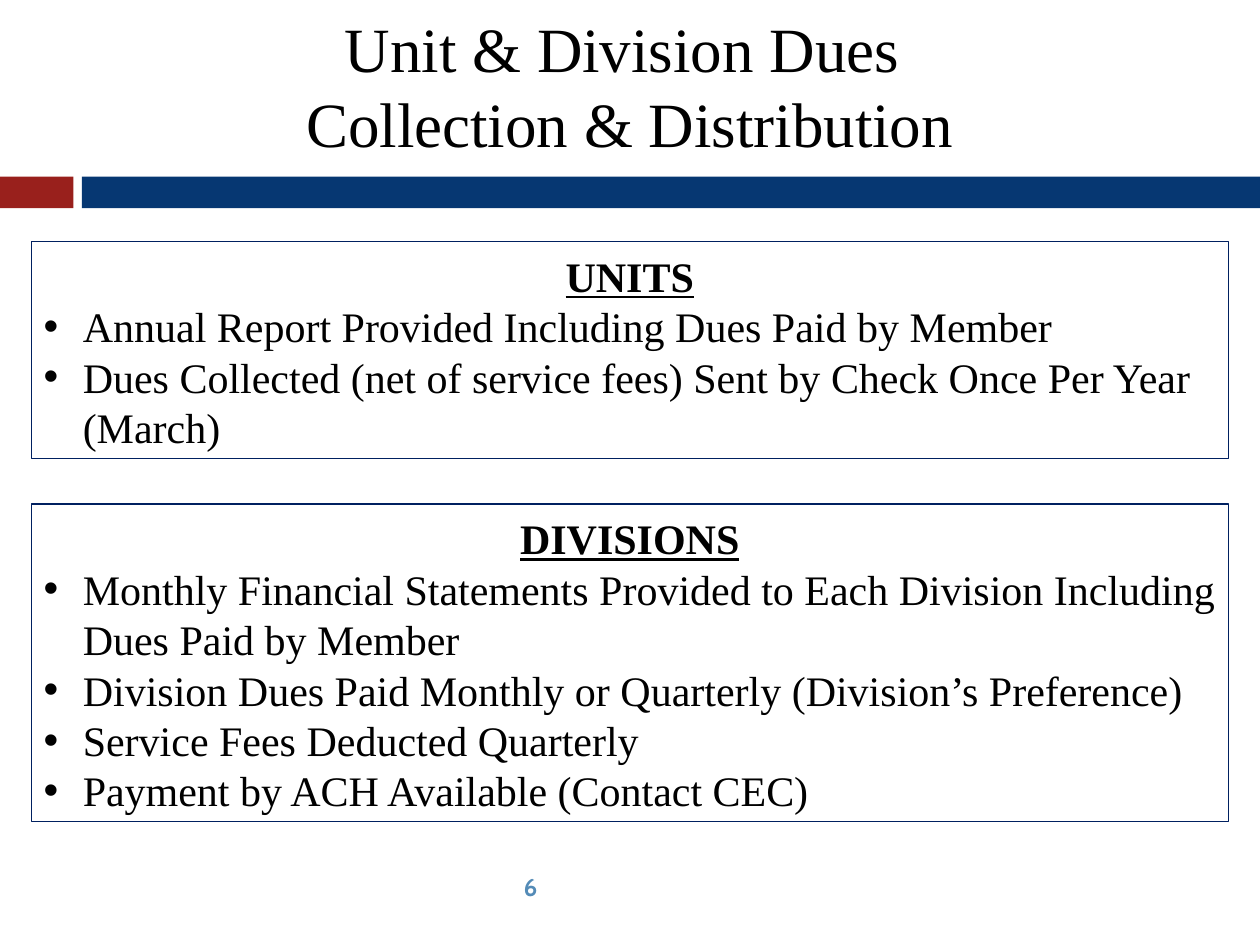
from lxml.etree import SubElement
from pptx import Presentation
from pptx.dml.color import RGBColor
from pptx.enum.shapes import MSO_SHAPE as Preset
from pptx.enum.text import MSO_ANCHOR as Anchor, PP_ALIGN as Align
from pptx.oxml import parse_xml
from pptx.oxml.ns import nsdecls, qn
from pptx.util import Cm, Pt

RED = RGBColor(0x99, 0x20, 0x1C)
BLUE = RGBColor(0x06, 0x37, 0x72)
NAVY = RGBColor(0x00, 0x20, 0x60)
LIGHT_BLUE = RGBColor(0x54, 0x8B, 0xB7)
BLACK = RGBColor(0, 0, 0)

SERIF = "Times New Roman"
TITLE = {"name": SERIF, "size": Pt(36)}
HEADING = {"name": SERIF, "size": Pt(24), "bold": True, "underline": True}
BULLET = {"name": SERIF, "size": Pt(24), "bold": False, "underline": False}
NUMBER = {"name": "Cabin", "size": Pt(14), "bold": True}


def add_text(paragraph, text, formats, color, align):
    paragraph.alignment = align
    run = paragraph.add_run()
    run.text = text
    for name, value in formats.items():
        setattr(run.font, name, value)
    run.font.color.rgb = color
    return run


presentation = Presentation()
presentation.slide_width = Cm(25.4)
presentation.slide_height = Cm(19.05)
slide = presentation.slides.add_slide(presentation.slide_layouts[6])

for left, width, color in [(0, 1.48, RED), (1.65, 23.75, BLUE)]:
    band = slide.shapes.add_shape(Preset.RECTANGLE, Cm(left), Cm(3.56), Cm(width), Cm(0.64))
    band.shadow.inherit = False
    band.fill.solid()
    band.fill.fore_color.rgb = color
    band.line.fill.background()

title = slide.shapes.add_textbox(Cm(1.83), Cm(0), Cm(21.74), Cm(3.18))
title_frame = title.text_frame
title_format = {"word_wrap": True, "vertical_anchor": Anchor.MIDDLE,
                "margin_left": Cm(0.18), "margin_right": Cm(0.18),
                "margin_top": Cm(0.35), "margin_bottom": Cm(0.1)}
for name, value in title_format.items():
    setattr(title_frame, name, value)
for index, text in enumerate(["Unit & Division Dues ", "Collection & Distribution"]):
    paragraph = title_frame.add_paragraph() if index else title_frame.paragraphs[0]
    paragraph.line_spacing = Pt(43)
    run = add_text(paragraph, text, TITLE, BLACK, Align.CENTER)
    run.font.fill._xPr.find(qn("a:solidFill")).addnext(parse_xml(
        f'<a:effectLst {nsdecls("a")}><a:outerShdw blurRad="38100" dist="38100" dir="2700000">'
        '<a:srgbClr val="000000"><a:alpha val="43000"/></a:srgbClr></a:outerShdw></a:effectLst>'))

sections = [
    (4.87, 4.37, "UNITS", [
        "Annual Report Provided Including Dues Paid by Member",
        "Dues Collected (net of service fees) Sent by Check Once Per Year (March)"]),
    (10.16, 6.4, "DIVISIONS", [
        "Monthly Financial Statements Provided to Each Division Including Dues Paid by Member",
        "Division Dues Paid Monthly or Quarterly (Division’s Preference)",
        "Service Fees Deducted Quarterly",
        "Payment by ACH Available (Contact CEC)"]),
]
for top, height, heading, bullets in sections:
    box = slide.shapes.add_shape(Preset.RECTANGLE, Cm(0.63), Cm(top), Cm(24.13), Cm(height))
    box.shadow.inherit = False
    box.fill.background()
    box.line.color.rgb = NAVY
    box.line.width = Pt(0.75)
    frame = box.text_frame
    frame.word_wrap = True
    frame.vertical_anchor = Anchor.TOP
    frame.margin_top = Cm(0.18)
    frame.paragraphs[0].line_spacing = Pt(28.8)
    add_text(frame.paragraphs[0], heading, HEADING, BLACK, Align.CENTER)
    for text in bullets:
        paragraph = frame.add_paragraph()
        paragraph.line_spacing = Pt(28.8)
        properties = paragraph._p.get_or_add_pPr()
        properties.set("marL", str(Cm(0.79)))
        properties.set("indent", str(-Cm(0.79)))
        SubElement(properties, qn("a:buFont"), typeface="Arial")
        SubElement(properties, qn("a:buChar"), char="•")
        add_text(paragraph, text, BULLET, BLACK, Align.LEFT)

number = slide.shapes.add_textbox(Cm(9.96), Cm(17.35), Cm(1.47), Cm(1.07))
number.text_frame.word_wrap = True
number.text_frame.vertical_anchor = Anchor.MIDDLE
add_text(number.text_frame.paragraphs[0], "6", NUMBER, LIGHT_BLUE, Align.CENTER)

presentation.save("out.pptx")
